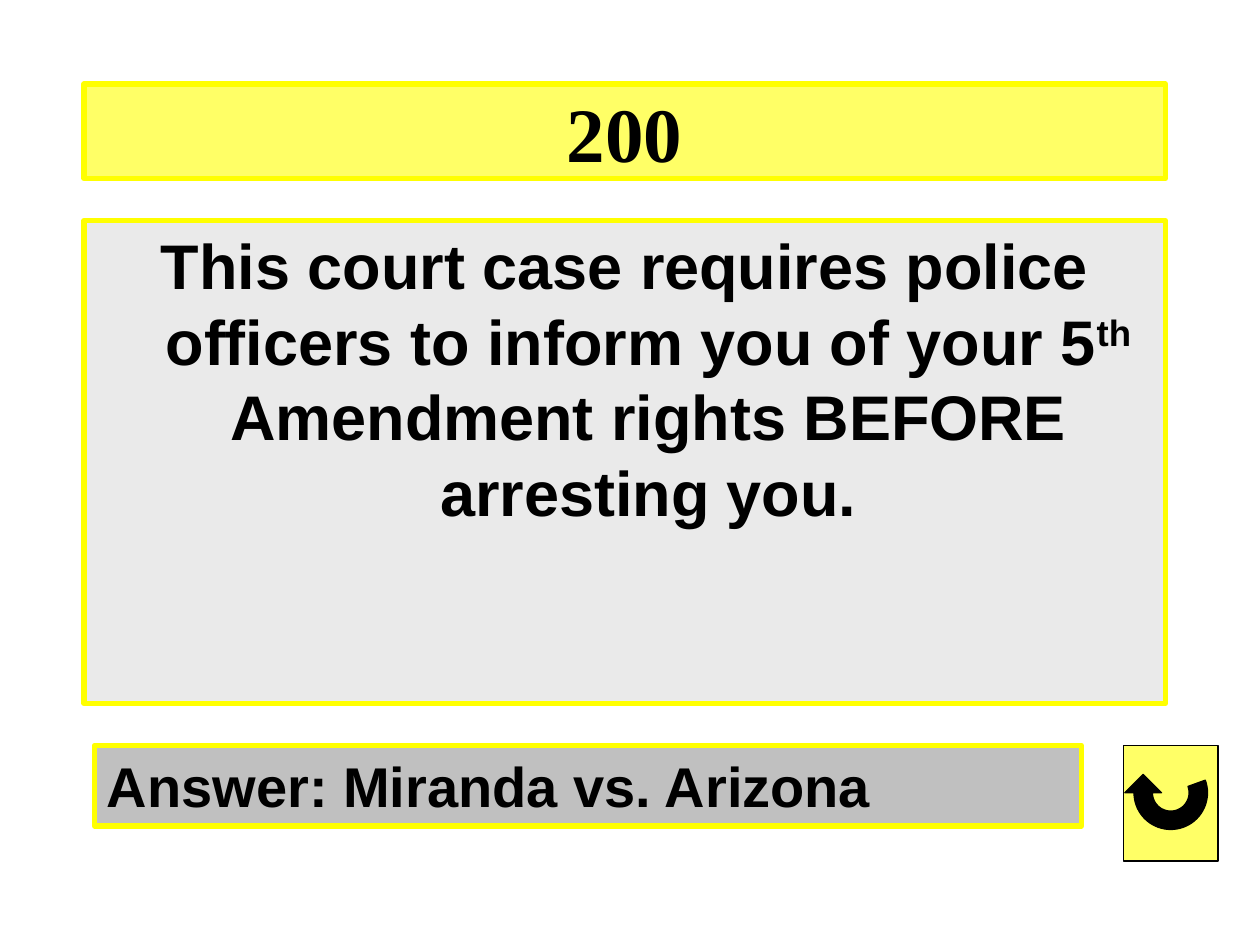
"""Build a quiz slide with a score, a question, an answer and a return button."""
from dataclasses import dataclass
from math import cos, radians, sin

from pptx import Presentation
from pptx.dml.color import RGBColor
from pptx.enum.shapes import MSO_SHAPE
from pptx.enum.text import MSO_ANCHOR, PP_ALIGN
from pptx.util import Pt

RECT = MSO_SHAPE.RECTANGLE
LEFT, CENTER = PP_ALIGN.LEFT, PP_ALIGN.CENTER
TOP, MIDDLE = MSO_ANCHOR.TOP, MSO_ANCHOR.MIDDLE

BLACK = RGBColor(0x00, 0x00, 0x00)
YELLOW = RGBColor(0xFF, 0xFF, 0x00)
LEMON = RGBColor(0xFF, 0xFF, 0x66)
PALE = RGBColor(0xEA, 0xEA, 0xEA)
GRAY = RGBColor(0xC0, 0xC0, 0xC0)


@dataclass
class Panel:
    left: float
    top: float
    width: float
    height: float
    fill: RGBColor
    texts: tuple[str, ...]
    size: float
    font: str = "Arial"
    align: PP_ALIGN = CENTER
    anchor: MSO_ANCHOR = TOP
    indent: float = 0


PANELS = (
    Panel(48, 126, 618, 276, PALE,
          ("This court case requires police officers to inform you of your 5",
           "th", " Amendment rights BEFORE arresting you."), 36, indent=27),
    Panel(54, 426, 564, 46, GRAY, ("Answer: Miranda vs. Arizona",), 32,
          align=LEFT),
    Panel(48, 48, 618, 54, LEMON, ("200",), 44, "Times New Roman",
          anchor=MIDDLE),
)


def paint(shape, fill: RGBColor, line: RGBColor, width: float) -> None:
    shape.shadow.inherit = False
    shape.fill.solid()
    shape.fill.fore_color.rgb = fill
    shape.line.color.rgb = line
    shape.line.width = Pt(width)


def draw_panel(shapes, panel: Panel) -> None:
    box = shapes.add_shape(RECT, Pt(panel.left), Pt(panel.top),
                           Pt(panel.width), Pt(panel.height))
    paint(box, panel.fill, YELLOW, 3)
    frame = box.text_frame
    frame.word_wrap = True
    frame.vertical_anchor = panel.anchor
    para = frame.paragraphs[0]
    para.alignment = panel.align
    if panel.indent:
        props = para._p.get_or_add_pPr()
        props.set("marL", str(Pt(panel.indent)))
        props.set("indent", str(Pt(-panel.indent)))
    for text in panel.texts:
        run = para.add_run()
        run.text = text
        font = run.font
        font.name, font.size, font.bold = panel.font, Pt(panel.size), True
        font.color.rgb = BLACK
        if text == "th":
            font._element.set("baseline", "30000")


def arc(x: float, y: float, radius: float, start: int,
        end: int, step: int) -> list[tuple[float, float]]:
    return [(x + radius * cos(radians(a)), y + radius * sin(radians(a)))
            for a in range(start, end + step, step)]


def draw_button(shapes) -> None:
    group = shapes.add_group_shape().shapes
    back = group.add_shape(RECT, Pt(642), Pt(426), Pt(54), Pt(66))
    paint(back, LEMON, BLACK, 0.75)
    x, y, outer, inner = 669, 453, 21, 10.5
    points = arc(x, y, inner, 180, -20, -5) + arc(x, y, outer, -20, 180, 5)
    points += [(x - 26.25, y), (x - 15.75, y - inner), (x - 5.25, y)]
    build = group.build_freeform(Pt(points[0][0]), Pt(points[0][1]))
    build.add_line_segments([(Pt(px), Pt(py)) for px, py in points[1:]])
    paint(build.convert_to_shape(), BLACK, BLACK, 0.75)


def main() -> None:
    deck = Presentation()
    deck.slide_width, deck.slide_height = Pt(720), Pt(540)
    slide = deck.slides.add_slide(deck.slide_layouts[6])
    for panel in PANELS:
        draw_panel(slide.shapes, panel)
    draw_button(slide.shapes)
    deck.save("out.pptx")


if __name__ == "__main__":
    main()
